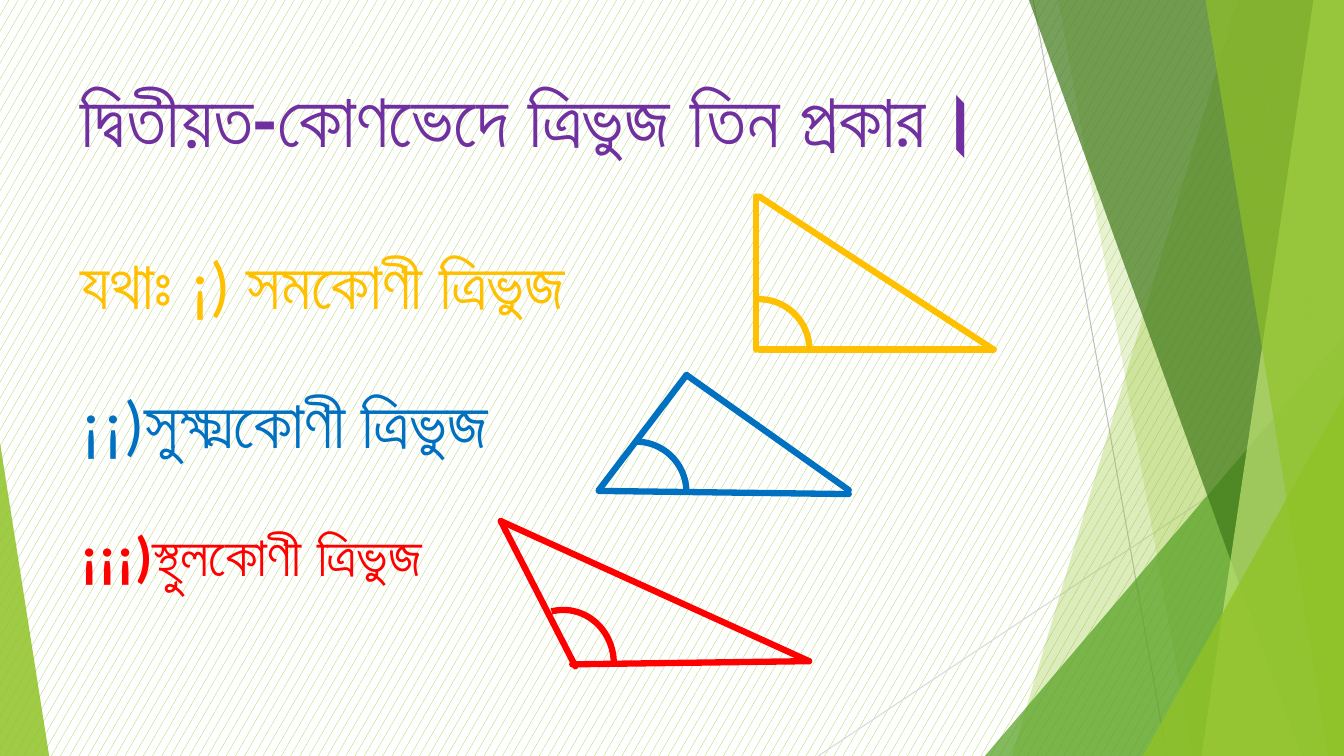
from lxml import etree
from pptx import Presentation
from pptx.dml.color import RGBColor
from pptx.enum.dml import MSO_PATTERN
from pptx.enum.shapes import MSO_CONNECTOR, MSO_SHAPE
from pptx.enum.text import MSO_ANCHOR
from pptx.oxml.ns import qn
from pptx.util import Cm, Pt

STRAIGHT = MSO_CONNECTOR.STRAIGHT
TRIANGLE = MSO_SHAPE.ISOSCELES_TRIANGLE
ARC = MSO_SHAPE.ARC
CONFETTI = MSO_PATTERN.SMALL_CONFETTI
TOP = MSO_ANCHOR.TOP

WHITE = RGBColor(0xFF, 0xFF, 0xFF)
GREEN = RGBColor(0x90, 0xC2, 0x26)
MID_GREEN = RGBColor(0x54, 0xA0, 0x21)
DARK_GREEN = RGBColor(0x3F, 0x78, 0x19)
PALE_GREEN = RGBColor(0xC0, 0xE4, 0x74)
GREY = RGBColor(0xBF, 0xBF, 0xBF)
LIGHT_GREY = RGBColor(0xD9, 0xD9, 0xD9)
PURPLE = RGBColor(0x70, 0x30, 0xA0)
YELLOW = RGBColor(0xFF, 0xC0, 0x00)
BLUE = RGBColor(0x00, 0x70, 0xC0)
RED = RGBColor(0xFF, 0x00, 0x00)

FONT = "Calibri"
SLIDE_WIDTH, SLIDE_HEIGHT = 33.87, 19.05

FIGURES = [
    (YELLOW, (19.05, 4.95),
     [(0.08, 3.86, 5.99, 3.86), (0, 0, 0, 3.86), (0.08, 0, 5.99, 3.86)],
     (-1.19, 2.59, 2.54, 2.54), 162),
    (BLUE, (15.09, 9.45),
     [(0, 2.92, 6.3, 3), (2.21, 0, 6.3, 2.9), (0, 2.9, 2.21, 0)],
     (-0.33, 1.68, 2.54, 2.54), 162),
    (RED, (12.62, 13.13),
     [(7.77, 3.53, 1.8, 3.61), (1.88, 3.66, 0, 0), (0, 0, 7.77, 3.53)],
     (0.31, 2.24, 2.54, 2.69), 154.24),
]


def add_line(slide, ends, color, width, round_cap=False):
    line = slide.shapes.add_connector(STRAIGHT, *[Cm(value) for value in ends])
    line.line.color.rgb = color
    line.line.width = Pt(width)
    properties = line._element.spPr
    etree.SubElement(properties, qn("a:effectLst"))
    if round_cap:
        properties.find(qn("a:ln")).set("cap", "rnd")


def paint(shape, color, opacity):
    shape.shadow.inherit = False
    shape.line.fill.background()
    shape.fill.solid()
    shape.fill.fore_color.rgb = color
    color_element = shape._element.spPr.find(qn("a:solidFill"))[0]
    alpha = etree.SubElement(color_element, qn("a:alpha"))
    alpha.set("val", str(opacity * 1000))


def add_corner(slide, box, peak, color, opacity):
    corner = slide.shapes.add_shape(TRIANGLE, *[Cm(value) for value in box])
    corner.adjustments[0] = peak
    paint(corner, color, opacity)


def add_facet(slide, box, top_x, bottom_x, color, opacity):
    left, top, width, height = box
    right, bottom = left + width, top + height
    builder = slide.shapes.build_freeform(Cm(left + top_x), Cm(top))
    corners = [(right, top), (right, bottom), (left + bottom_x, bottom)]
    builder.add_line_segments([(Cm(x), Cm(y)) for x, y in corners], close=True)
    paint(builder.convert_to_shape(), color, opacity)


def add_side_pattern(slide, box):
    left, top, width, height = box
    bottom = top + height
    add_line(slide, (left + 1.22, top, left + 4.59, bottom), GREY, 0.75)
    add_line(slide, (left + width, top + 10.24, left - 4.2, bottom),
             LIGHT_GREY, 0.75)
    add_facet(slide, box, 6.37, 0.68, GREEN, 30)
    add_facet(slide, box, 1.85, 5.23, GREEN, 20)
    add_corner(slide, (left, top + 8.46, width, height - 8.46),
               1, MID_GREEN, 72)
    add_facet(slide, box, 1.11, 7.97, DARK_GREEN, 70)
    add_facet(slide, box, 8.28, 5.46, PALE_GREEN, 70)
    add_facet(slide, box, 5.56, 8.66, GREEN, 65)
    add_corner(slide, (left + 3.98, top + 9.98, width - 3.98, height - 9.98),
               1, GREEN, 80)


def add_text(slide, box, lines):
    text_box = slide.shapes.add_textbox(*[Cm(value) for value in box])
    text_frame = text_box.text_frame
    text_frame.word_wrap = True
    text_frame.vertical_anchor = TOP
    text_frame.text = "\n".join(line[0] for line in lines)
    for paragraph, line in zip(text_frame.paragraphs, lines):
        _, size, color, bold, space_before = line
        paragraph.space_before = Pt(space_before)
        font = paragraph.runs[0].font
        font.name = FONT
        font.size = Pt(size)
        font.bold = bold
        font.color.rgb = color


def add_angle_figure(slide, origin, color, sides, arc_box, arc_start):
    left, top = origin
    for x1, y1, x2, y2 in sides:
        add_line(slide, (left + x1, top + y1, left + x2, top + y2),
                 color, 4.5, round_cap=True)
    x, y, width, height = arc_box
    arc = slide.shapes.add_shape(ARC, Cm(left + x), Cm(top + y),
                                 Cm(width), Cm(height))
    arc.adjustments[0] = arc_start
    arc.shadow.inherit = False
    arc.fill.background()
    arc.line.color.rgb = color
    arc.line.width = Pt(4.5)


def build_slide(presentation):
    slide = presentation.slides.add_slide(presentation.slide_layouts[6])
    background = slide.background.fill
    background.patterned()
    background.pattern = CONFETTI
    background.fore_color.rgb = GREEN
    background.back_color.rgb = WHITE

    add_side_pattern(slide, (24.82, 0, SLIDE_WIDTH - 24.82, SLIDE_HEIGHT))
    add_corner(slide, (0, 11.15, 1.24, SLIDE_HEIGHT - 11.15), 0, GREEN, 85)
    add_text(slide, (1.78, 1.7, 23.88, 3.66), [
        ("দ্বিতীয়ত-কোণভেদে ত্রিভুজ তিন প্রকার।", 54, PURPLE, True, 0),
    ])
    add_text(slide, (1.78, 5.97, 23.88, 10.77), [
        ("যথাঃ ¡) সমকোণী ত্রিভুজ", 48, YELLOW, False, 10),
        ("¡¡)সুক্ষ্মকোণী ত্রিভুজ", 48, BLUE, False, 42),
        ("¡¡¡)স্থুলকোণী ত্রিভুজ", 40, RED, True, 42),
    ])
    for color, origin, sides, arc_box, arc_start in FIGURES:
        add_angle_figure(slide, origin, color, sides, arc_box, arc_start)


def main():
    presentation = Presentation()
    presentation.slide_width = Cm(SLIDE_WIDTH)
    presentation.slide_height = Cm(SLIDE_HEIGHT)
    build_slide(presentation)
    presentation.save("out.pptx")


if __name__ == "__main__":
    main()
